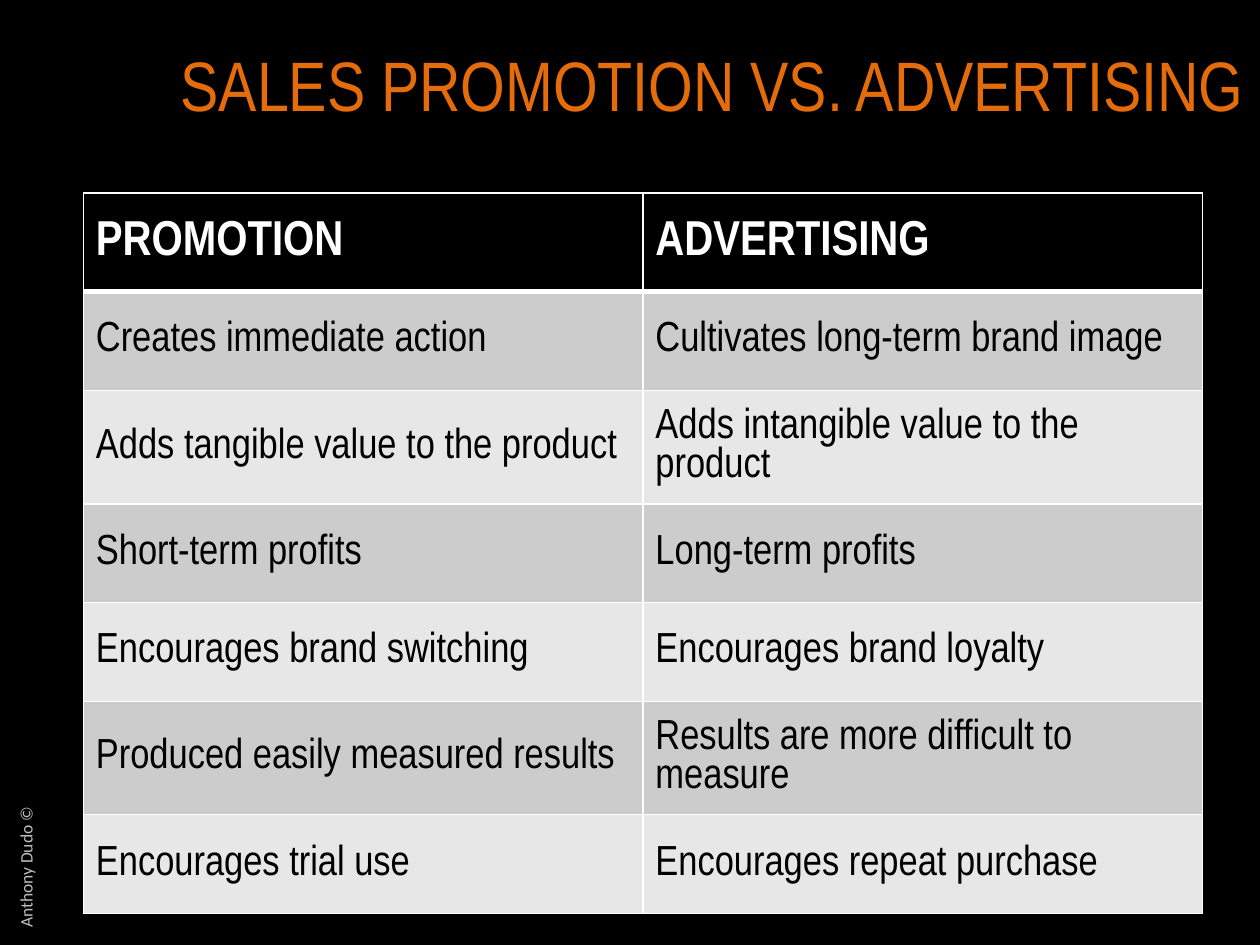
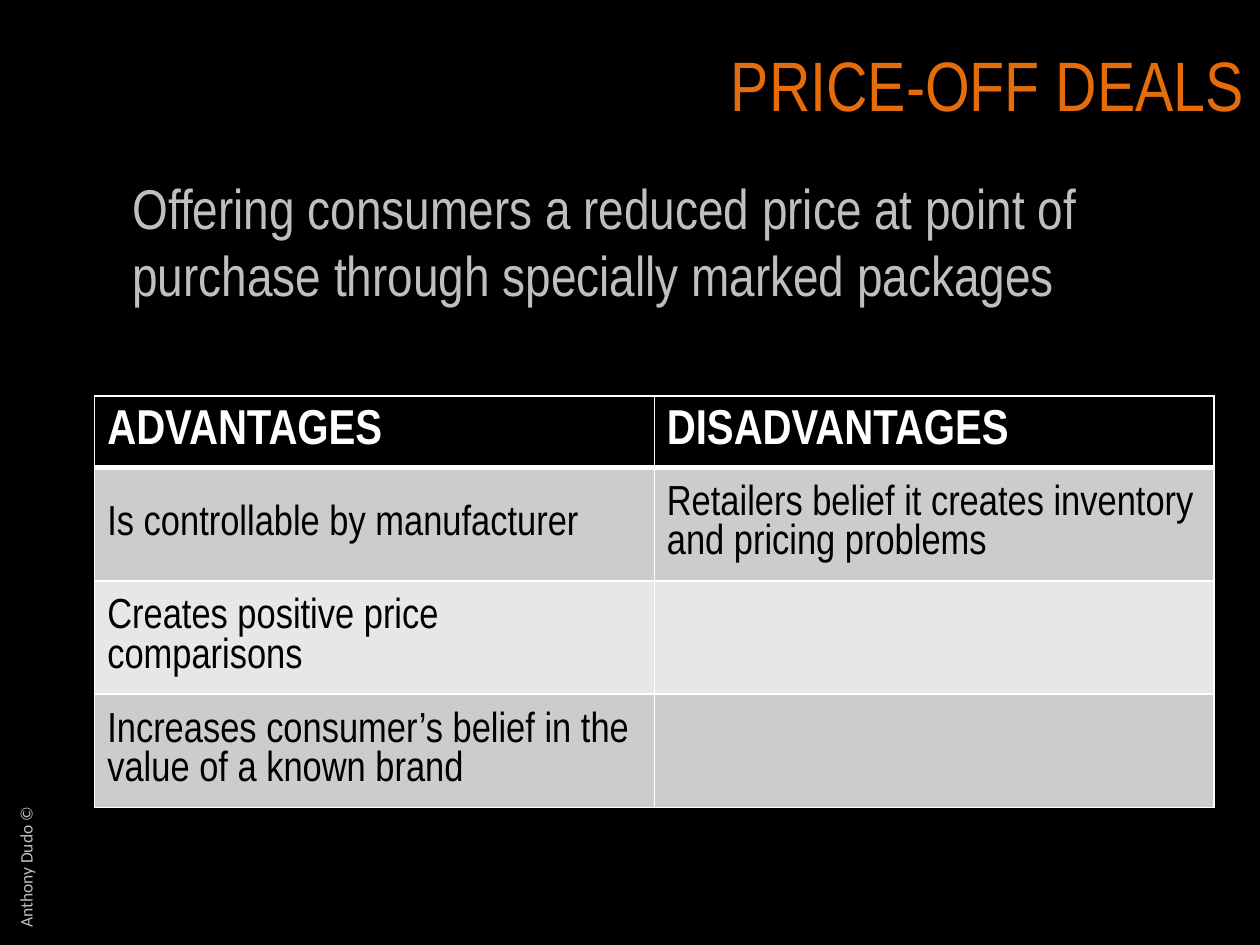
from lxml import etree
from pptx import Presentation
from pptx import util as u
from pptx.dml.color import RGBColor
from pptx.enum import text
from pptx.oxml import ns

INK = {"back": "000000", "title": "E46C0A", "soft": "BFBFBF", "line": "FFFFFF",
       "head": "FFFFFF", "cell": "000000", "odd": "CCCCCC", "even": "E7E7E7"}
FONT = "Arial Narrow"
CREDIT = "Anthony Dudo ©"

# Table places and row heights are in cm.
SHORT, TALL, SLIM = 1.99, 2.28, 1.43
SLIDES = [
    {"title": "SALES PROMOTION VS. ADVERTISING",
     "place": (1.68, 3.89),
     "rows": [
         (SHORT, "PROMOTION", "ADVERTISING"),
         (SHORT, "Creates immediate action", "Cultivates long-term brand image"),
         (TALL, "Adds tangible value to the product",
          "Adds intangible value to the product"),
         (SHORT, "Short-term profits", "Long-term profits"),
         (SHORT, "Encourages brand switching", "Encourages brand loyalty"),
         (TALL, "Produced easily measured results",
          "Results are more difficult to measure"),
         (SHORT, "Encourages trial use", "Encourages repeat purchase"),
     ]},
    {"title": "PRICE-OFF DEALS",
     "lead": "Offering consumers a reduced price at point of purchase "
             "through specially marked packages",
     "place": (1.91, 7.98),
     "rows": [
         (SLIM, "ADVANTAGES", "DISADVANTAGES"),
         (TALL, "Is controllable by manufacturer",
          "Retailers belief it creates inventory and pricing problems"),
         (TALL, "Creates positive price comparisons", ""),
         (TALL, "Increases consumer’s belief in the value of a known brand", ""),
     ]},
]
COL = 11.28


def shade(name):
    return RGBColor.from_string(INK[name])


def style(frame, size, ink, font=FONT, bold=False):
    for para in frame.paragraphs:
        for run in para.runs:
            run.font.size, run.font.name = u.Pt(size), font
            run.font.bold = bold
            run.font.color.rgb = shade(ink)


def add_box(slide, words, left, top, width, height):
    box = slide.shapes.add_textbox(*map(u.Cm, (left, top, width, height)))
    box.text_frame.word_wrap = True
    box.text_frame.text = words
    return box


def add_title(slide, words):
    title = slide.shapes.title
    title.left, title.top = u.Cm(1.5), u.Cm(0)
    title.width, title.height = u.Cm(23.83), u.Cm(3.38)
    frame = title.text_frame
    frame.text = words
    frame.auto_size = text.MSO_AUTO_SIZE.NONE
    frame.vertical_anchor = text.MSO_ANCHOR.MIDDLE
    frame.paragraphs[0].alignment = text.PP_ALIGN.RIGHT
    style(frame, 40, "title")


def add_credit(slide):
    box = add_box(slide, CREDIT, -2.41, 15.67, 5.87, 0.69)
    box.rotation = 270
    style(box.text_frame, 10, "soft", "Calibri")


def add_lead(slide, words):
    box = add_box(slide, words, 2.42, 2.46, 20.8, 5.94)
    frame = box.text_frame
    frame.vertical_anchor = text.MSO_ANCHOR.MIDDLE
    frame.margin_bottom = u.Cm(1.29)
    style(frame, 32, "soft")


def rule(cell, side, points):
    """Draw one border of a cell."""
    props = cell._tc.get_or_add_tcPr()
    line = etree.SubElement(props, ns.qn("a:ln" + side), w=str(u.Pt(points)))
    fill = etree.SubElement(line, ns.qn("a:solidFill"))
    etree.SubElement(fill, ns.qn("a:srgbClr"), val=INK["line"])


def add_grid(slide, place, rows):
    high = sum(row[0] for row in rows)
    size = map(u.Cm, (*place, 2 * COL, high))
    grid = slide.shapes.add_table(len(rows), 2, *size).table
    for col in grid.columns:
        col.width = u.Cm(COL)
    for r, (tall, *words) in enumerate(rows):
        grid.rows[r].height = u.Cm(tall)
        for c, word in enumerate(words):
            cell = grid.cell(r, c)
            for side in "LRTB":
                thick = (r, side) in ((0, "B"), (1, "T"))
                rule(cell, side, 3 if thick else 1)
            cell.fill.solid()
            band = "odd" if r % 2 else "even"
            cell.fill.fore_color.rgb = shade(band if r else "back")
            cell.vertical_anchor = text.MSO_ANCHOR.MIDDLE
            if word:
                cell.text_frame.text = word
                if r:
                    style(cell.text_frame, 24, "cell")
                else:
                    style(cell.text_frame, 28, "head", bold=True)


def main():
    deck = Presentation()
    deck.slide_width, deck.slide_height = u.Cm(25.4), u.Cm(19.05)
    back = deck.slide_master.background.fill
    back.solid()
    back.fore_color.rgb = shade("back")
    for data in SLIDES:
        slide = deck.slides.add_slide(deck.slide_layouts[5])
        add_title(slide, data["title"])
        add_credit(slide)
        add_grid(slide, data["place"], data["rows"])
        if "lead" in data:
            add_lead(slide, data["lead"])
    deck.save("out.pptx")


if __name__ == "__main__":
    main()
